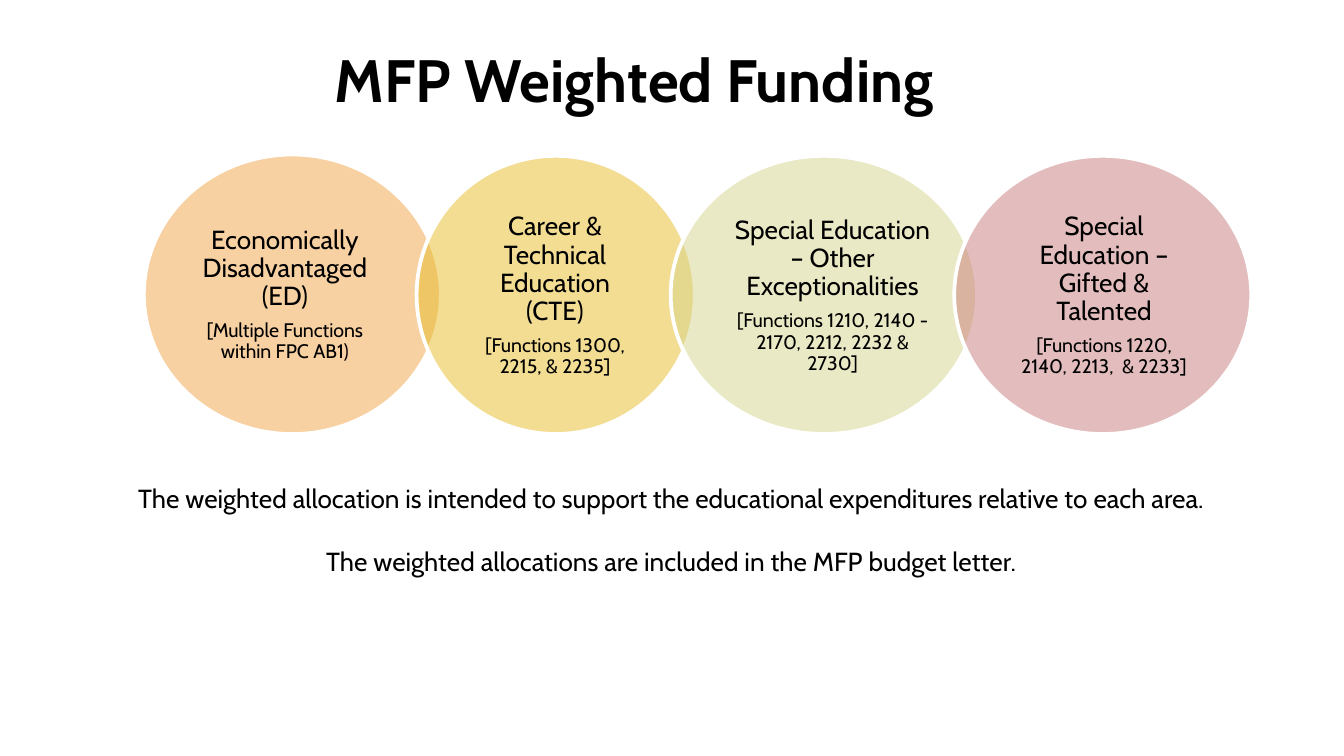
from pptx import Presentation
from pptx.dml.color import RGBColor
from pptx.enum.shapes import MSO_SHAPE as Shape
from pptx.enum.text import MSO_ANCHOR as Anchor, PP_ALIGN as Align
from pptx.oxml.ns import qn
from pptx.util import Inches, Pt
from lxml import etree

COLORS = {
    "text": "000000",
    "outline": "FFFFFF",
    "orange": "F3A447",
    "gold": "E7BC29",
    "green": "D7D58D",
    "rose": "C97D7D",
}


def write(para, text, size=14, bold=False, align=Align.CENTER, spacing=1.0, after=0):
    """Fill a paragraph with one formatted run."""
    para.alignment = align
    para.line_spacing = spacing
    para.space_before = Pt(0)
    para.space_after = Pt(after)
    span = para.add_run()
    span.text = text
    span.font.name = "Cabin"
    span.font.size = Pt(size)
    span.font.bold = bold
    span.font.color.rgb = RGBColor.from_string(COLORS["text"])


deck = Presentation()
deck.slide_width = Inches(10)
deck.slide_height = Inches(10) * 9 // 16
page = deck.slides.add_slide(deck.slide_layouts[5])

title = page.shapes.title
title.left, title.top = Inches(2.39), Inches(0.27)
title.width, title.height = Inches(5.21), Inches(0.64)
title.text_frame.word_wrap = False
title.text_frame.vertical_anchor = Anchor.TOP
write(title.text_frame.paragraphs[0], "MFP Weighted Funding",
      size=32, bold=True, align=Align.LEFT)

# color, circle (left, top, width, height), label (left, top, width, height), heading, functions
areas = [
    ("orange", (1.07, 1.15, 2.21, 2.08), (1.28, 1.46, 1.68, 1.47),
     "Economically Disadvantaged (ED)", "[Multiple Functions within FPC AB1)"),
    ("gold", (3.1, 1.16, 2.07, 2.07), (3.4, 1.47, 1.46, 1.46),
     "Career & Technical Education (CTE)", "[Functions 1300, 2215, & 2235]"),
    ("green", (4.99, 1.16, 2.28, 2.07), (5.29, 1.47, 1.81, 1.46),
     "Special Education – Other Exceptionalities",
     "[Functions 1210, 2140 - 2170, 2212, 2232 & 2730]"),
    ("rose", (7.1, 1.16, 2.21, 2.07), (7.43, 1.47, 1.57, 1.46),
     "Special Education – Gifted & Talented", "[Functions 1220, 2140, 2213,  & 2233]"),
]
for color, circle_place, label_place, heading, functions in areas:
    circle = page.shapes.add_shape(Shape.OVAL, *map(Inches, circle_place))
    circle.shadow.inherit = False
    circle.fill.solid()
    circle.fill.fore_color.rgb = RGBColor.from_string(COLORS[color])
    fill_color = circle.element.spPr.find(qn("a:solidFill"))[0]
    etree.SubElement(fill_color, qn("a:alpha"), val="50000")
    circle.line.color.rgb = RGBColor.from_string(COLORS["outline"])
    circle.line.width = Pt(2)

    label = page.shapes.add_textbox(*map(Inches, label_place))
    frame = label.text_frame
    frame.word_wrap = True
    frame.vertical_anchor = Anchor.MIDDLE
    frame.margin_left = frame.margin_right = Inches(0.15)
    frame.margin_top = frame.margin_bottom = Inches(0.03)
    write(frame.paragraphs[0], heading, spacing=0.9, after=5)
    write(frame.add_paragraph(), functions, size=10.5, spacing=0.9, after=4)

summary = page.shapes.add_textbox(Inches(0.34), Inches(3.54), Inches(9.31), Inches(0.81))
summary.text_frame.word_wrap = True
write(summary.text_frame.paragraphs[0],
      "The weighted allocation is intended to support the educational expenditures "
      "relative to each area.", after=17)
write(summary.text_frame.add_paragraph(),
      "The weighted allocations are included in the MFP budget letter.")

deck.save("out.pptx")
